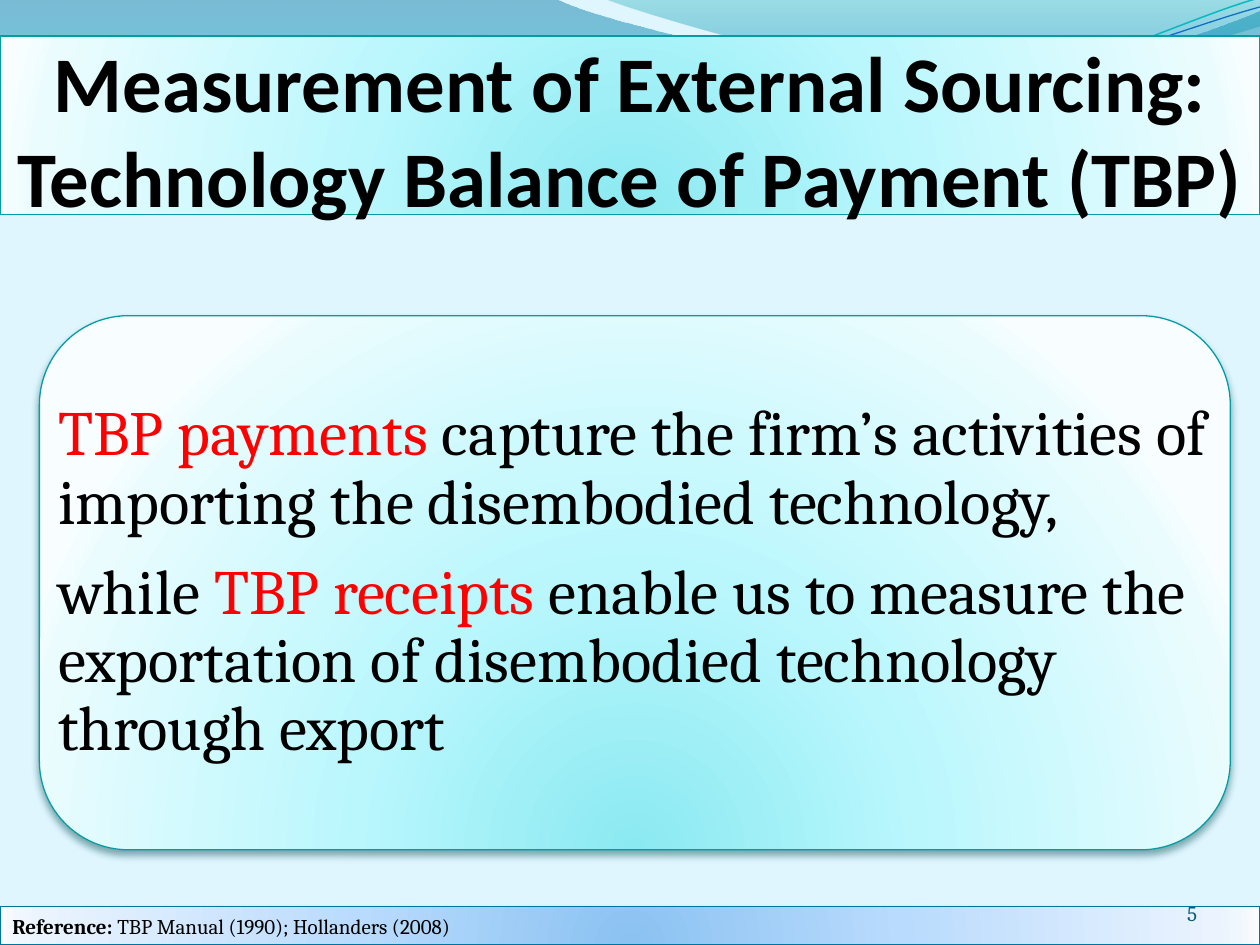
from lxml import etree
from pptx import Presentation
from pptx.dml.color import RGBColor as RGB
from pptx.enum.shapes import MSO_SHAPE as Kind
from pptx.enum.text import MSO_ANCHOR as Anchor, MSO_AUTO_SIZE as Auto, PP_ALIGN as Align
from pptx.oxml.ns import qn
from pptx.util import Pt

HUES = {
    "back": "DFF6FF", "text": "000000", "key": "FF0000", "page": "045D75",
    "teal": "069CA3", "deep": "024B4E", "blue": "0074A1", "navy": "00374C",
}
TITLE = "Measurement of External Sourcing:\vTechnology Balance of Payment (TBP)"
BODY = [
    [("TBP payments ", "key"),
     ("capture the firm’s activities of importing the disembodied technology,", "text")],
    [("while ", "text"), ("TBP receipts ", "key"),
     ("enable us to measure the exportation of disembodied technology through export", "text")],
]
SOURCE = [("Reference: ", True), ("TBP Manual (1990); Hollanders (2008)", False)]
PAGE = "5"

# Gradient stops: position %, colour, opacity %
AQUA = [(0, "8BE9F1", 100), (43, "B9F7FD", 100), (93, "EAFCFE", 100), (100, "F8FEFF", 100)]
SKY = [(0, "8BC2F1", 100), (43, "B9DBFD", 100), (93, "EAF3FE", 100), (100, "F8FBFF", 100)]

# Paths in points: a start, then lines (2 numbers) and Bezier curves (6 numbers)
WAVES = [
    ([(0, 0), (317, -1), (343, 12, 478, 45, 546, 45), (614, 45, 690, 19, 720, 6),
      (721, 26), (708, 32, 626, 55, 537, 54), (448, 54, 275, 20, 185, 24),
      (93, 26, 33, 60, -1, 81)],
     [(0, "0074A1", 45), (100, "00C6CF", 55)]),
    ([(345, -1), (367, 8, 491, 45, 554, 47), (616, 50, 692, 23, 720, 15), (720, 0)],
     [(0, "00A1A9", 30), (80, "008BBF", 45)]),
]
STRANDS = [
    ([(0, 80), (35, 67, 114, 41, 199, 37), (284, 34, 427, 64, 513, 58),
      (600, 51, 675, 11, 719, -1)], "0AB8BF", 0.85),
    ([(0, 75), (34, 69, 118, 44, 204, 40), (290, 37, 430, 60, 516, 54),
      (602, 48, 678, 15, 720, 4)], "0F6FC6", 0.75),
]
CARD = (22.5, 180.4, 680.5, 305.2)


def add(parent, tag, **attrs):
    node = etree.SubElement(parent, qn(tag))
    for key, val in attrs.items():
        node.set(key, str(val))
    return node


def tint(parent, hue, alpha):
    color = add(parent, "a:srgbClr", val=hue)
    if alpha < 100:
        add(color, "a:alpha", val=alpha * 1000)


def blend(shape, stops, glow=False):
    """Fill with a gradient: radial from below if glow, else top to bottom."""
    shape.fill.background()
    props = shape._element.spPr
    old = props.find(qn("a:noFill"))
    grad = etree.Element(qn("a:gradFill"), rotWithShape="1")
    group = add(grad, "a:gsLst")
    for pos, hue, alpha in stops:
        tint(add(group, "a:gs", pos=pos * 1000), hue, alpha)
    if glow:
        path = add(grad, "a:path")
        path.set("path", "circle")
        add(path, "a:fillToRect", l=50000, t=130000, r=50000, b=-30000)
    else:
        add(grad, "a:lin", ang=5400000, scaled=1)
    props.replace(old, grad)


def panel(shape, stops, edge, shade=None):
    blend(shape, stops, glow=True)
    shape.line.color.rgb = RGB.from_string(HUES[edge])
    shape.line.width = Pt(0.75)
    shape.shadow.inherit = False
    if shade:
        effects = shape._element.spPr.find(qn("a:effectLst"))
        drop = add(effects, "a:outerShdw", blurRad=Pt(4.5), dist=Pt(3), dir=5400000,
                   algn="ctr", rotWithShape=0)
        tint(drop, HUES[shade], 48)


def draw(slide, path, close):
    """Build a freeform through the end points, then bend its curved parts."""
    first, *rest = [(Pt(part[-2]), Pt(part[-1])) for part in path]
    pen = slide.shapes.build_freeform(*first)
    pen.add_line_segments(rest, close=close)
    shape = pen.convert_to_shape()
    shape.shadow.inherit = False
    lines = list(shape._element.iter(qn("a:lnTo")))
    for part, line in zip(path[1:], lines):
        if len(part) == 6:
            curve = etree.Element(qn("a:cubicBezTo"))
            for x, y in zip(part[::2], part[1::2]):
                add(curve, "a:pt", x=Pt(x) - shape.left, y=Pt(y) - shape.top)
            line.getparent().replace(line, curve)
    return shape


def place(shape, box):
    shape.left, shape.top, shape.width, shape.height = map(Pt, box)


def setup(shape, anchor, pads):
    frame = shape.text_frame
    frame.word_wrap = True
    frame.auto_size = Auto.NONE
    frame.vertical_anchor = anchor
    (frame.margin_left, frame.margin_top,
     frame.margin_right, frame.margin_bottom) = map(Pt, pads)
    return frame


def style(para, face, size, hue="text", align=Align.LEFT):
    para.alignment = align
    para.font.name = face
    para.font.size = Pt(size)
    para.font.color.rgb = RGB.from_string(HUES[hue])


def main():
    deck = Presentation()
    deck.slide_width, deck.slide_height = Pt(720), Pt(540)
    slide = deck.slides.add_slide(deck.slide_layouts[1])
    shapes = slide.shapes
    back = slide.background.fill
    back.solid()
    back.fore_color.rgb = RGB.from_string(HUES["back"])

    for path, stops in WAVES:
        wave = draw(slide, path, True)
        blend(wave, stops)
        wave.line.fill.background()
    for path, hue, width in STRANDS:
        strand = draw(slide, path, False)
        strand.fill.background()
        strand.line.color.rgb = RGB.from_string(hue)
        strand.line.width = Pt(width)

    title = shapes.title
    shapes._spTree.append(title._element)
    place(title, (0, 20.6, 720, 102))
    panel(title, AQUA, "teal")
    frame = setup(title, Anchor.MIDDLE, (0, 3.6, 0, 0))
    frame.text = TITLE
    style(frame.paragraphs[0], "Calibri", 45, align=Align.CENTER)
    frame.paragraphs[0].font.bold = True

    card = shapes.add_shape(Kind.ROUNDED_RECTANGLE, *map(Pt, CARD))
    panel(card, AQUA, "teal", "deep")

    body = slide.placeholders[1]
    shapes._spTree.append(body._element)
    place(body, CARD)
    frame = setup(body, Anchor.MIDDLE, [10.8] * 4)
    for i, parts in enumerate(BODY):
        para = frame.add_paragraph() if i else frame.paragraphs[0]
        props = para._p.get_or_add_pPr()
        props.set("marL", "0")
        props.set("indent", "0")
        add(props, "a:buNone")
        style(para, "Cambria", 36)
        para.line_spacing = 0.9
        para.space_before, para.space_after = Pt(0), Pt(12.6)
        for words, hue in parts:
            run = para.add_run()
            run.text = words
            run.font.color.rgb = RGB.from_string(HUES[hue])

    foot = shapes.add_shape(Kind.RECTANGLE, 0, Pt(518.2), Pt(720), Pt(21.8))
    panel(foot, SKY, "blue", "navy")
    para = setup(foot, Anchor.TOP, (7.2, 3.6, 7.2, 3.6)).paragraphs[0]
    style(para, "Cambria", 12)
    for words, bold in SOURCE:
        run = para.add_run()
        run.text = words
        run.font.bold = bold
        run.font.color.rgb = RGB.from_string(HUES["text"])

    number = shapes.add_textbox(Pt(624), Pt(500), Pt(60), Pt(29))
    frame = setup(number, Anchor.BOTTOM, [0] * 4)
    frame.text = PAGE
    style(frame.paragraphs[0], "Cambria", 12, "page", Align.RIGHT)

    deck.save("out.pptx")


if __name__ == "__main__":
    main()
